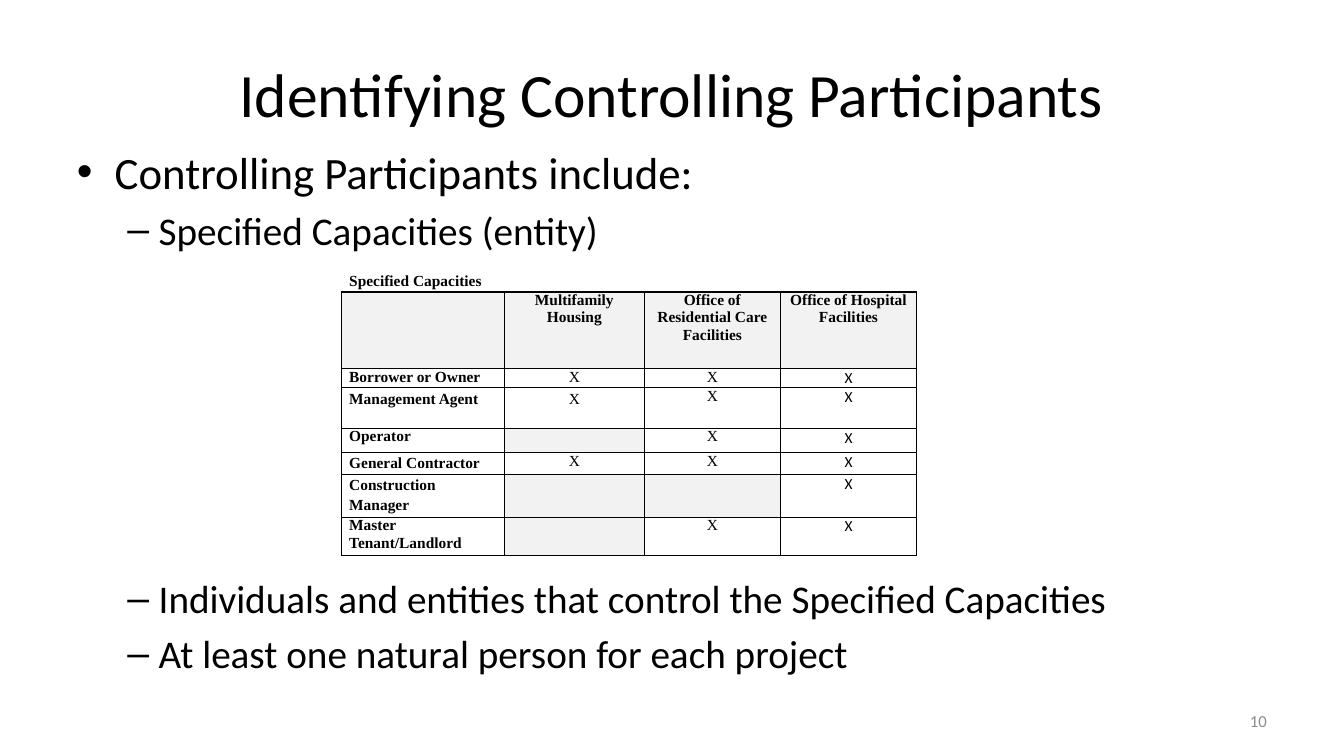
from lxml import etree
from pptx import Presentation, util as u
from pptx.dml.color import RGBColor
from pptx.enum import text as t
from pptx.oxml import ns

BLACK = RGBColor(0x00, 0x00, 0x00)
WHITE = RGBColor(0xFF, 0xFF, 0xFF)
SHADE = RGBColor(0xF2, 0xF2, 0xF2)
GREY = RGBColor(0x8C, 0x8C, 0x8C)
SANS, SERIF = "Calibri", "Times New Roman"
LEFT, CENTER, RIGHT = t.PP_ALIGN.LEFT, t.PP_ALIGN.CENTER, t.PP_ALIGN.RIGHT


def write(paragraph, words, size, font=SANS, color=BLACK, bold=False, align=LEFT,
          before=0, spacing=None, bullet=None, indent=(0, 0)):
    """Put formatted text in a paragraph; indent is (left, hanging) in cm."""
    if bullet:
        props = paragraph._p.get_or_add_pPr()
        props.set("marL", str(u.Cm(indent[0])))
        props.set("indent", str(-u.Cm(indent[1])))
        etree.SubElement(props, ns.qn("a:buFont"), typeface="Arial")
        etree.SubElement(props, ns.qn("a:buChar"), char=bullet)
    paragraph.alignment = align
    if before:
        paragraph.space_before = u.Pt(before)
    if spacing:
        paragraph.line_spacing = spacing
    if not words:
        # An empty cell keeps a small line so its row does not grow
        etree.SubElement(paragraph._p, ns.qn("a:endParaRPr"), sz=str(size * 100))
        return
    run = paragraph.add_run()
    run.text = words
    run.font.size = u.Pt(size)
    run.font.name = font
    run.font.bold = bold
    run.font.color.rgb = color


class SlideBuilder:
    def __init__(self, slide):
        self.slide = slide
        self.table_size = 11
        self.border_width = u.Pt(1)

    def text_box(self, place, paragraphs, anchor=t.MSO_ANCHOR.TOP):
        frame = self.slide.shapes.add_textbox(*map(u.Cm, place)).text_frame
        frame.word_wrap = True
        frame.vertical_anchor = anchor
        for i, (words, style) in enumerate(paragraphs):
            write(frame.add_paragraph() if i else frame.paragraphs[0], words, **style)

    def border(self, cell, visible_sides):
        props = cell._tc.get_or_add_tcPr()
        for side in "LRTB":
            line = etree.SubElement(props, ns.qn(f"a:ln{side}"), w=str(self.border_width))
            if side in visible_sides:
                fill = etree.SubElement(line, ns.qn("a:solidFill"))
                etree.SubElement(fill, ns.qn("a:srgbClr"), val=str(BLACK))
            else:
                etree.SubElement(line, ns.qn("a:noFill"))

    def cell(self, cell, words, fill, sides="LRTB", **style):
        cell.margin_left = cell.margin_right = u.Cm(0.19)
        cell.margin_top = cell.margin_bottom = 0
        self.border(cell, sides)
        cell.fill.solid()
        cell.fill.fore_color.rgb = fill
        write(cell.text_frame.paragraphs[0], words, self.table_size, **style)

    def table(self, left, top, widths, heights):
        frame = self.slide.shapes.add_table(
            len(heights), len(widths), u.Cm(left), u.Cm(top),
            u.Cm(sum(widths)), u.Cm(sum(heights)))
        table = frame.table
        table.first_row = table.horz_banding = False
        for column, width in zip(table.columns, widths):
            column.width = u.Cm(width)
        for row, height in zip(table.rows, heights):
            row.height = u.Cm(height)
        return table


def add_capacities(builder):
    caption = "Specified Capacities"
    offices = ["", "Multifamily Housing", "Office of Residential Care Facilities",
               "Office of Hospital Facilities"]
    # Capacity, marks per office, line spacing of the name and of the first mark
    capacities = [
        ("Borrower or Owner", "XXX", None, None),
        ("Management Agent", "XXX", 1.15, 1.15),
        ("Operator", "-XX", None, None),
        ("General Contractor", "XXX", 1.15, None),
        ("Construction Manager", "--X", 1.15, None),
        ("Master Tenant/Landlord", "-XX", None, None),
    ]
    table = builder.table(8.61, 6.88, [4.1, 3.53, 3.43, 3.43],
                          [0.48, 1.93, 0.48, 1.02, 0.61, 0.56, 0.56, 0.97])

    # Caption row across all columns
    for col in range(4):
        builder.cell(table.cell(0, col), "" if col else caption, WHITE, sides="B",
                     font=SERIF, bold=True)
    table.cell(0, 0).merge(table.cell(0, 3))

    # Header row
    for col, office in enumerate(offices):
        builder.cell(table.cell(1, col), office, SHADE, font=SERIF, bold=True, align=CENTER)

    # One row per capacity; a dash stands for a shaded, empty cell
    for row, (name, marks, name_spacing, mark_spacing) in enumerate(capacities, 2):
        builder.cell(table.cell(row, 0), name, WHITE, font=SERIF, bold=True,
                     spacing=name_spacing)
        for col, mark in enumerate(marks, 1):
            empty = mark == "-"
            builder.cell(table.cell(row, col), "" if empty else mark,
                         SHADE if empty else WHITE, font=SANS if col == 3 else SERIF,
                         align=CENTER, spacing=mark_spacing if col == 1 else None)


def main():
    deck = Presentation()
    deck.slide_width, deck.slide_height = u.Cm(33.87), u.Cm(19.05)
    builder = SlideBuilder(deck.slides.add_slide(deck.slide_layouts[6]))

    # Title
    builder.text_box((1.69, 0.76, 30.48, 3.18), [
        ("Identifying Controlling Participants", dict(size=44, align=CENTER)),
    ], t.MSO_ANCHOR.MIDDLE)

    # Bullets, with room for the table after the second one
    point = dict(size=32, bullet="•", indent=(0.95, 0.95))
    subpoint = dict(size=28, bullet="–", indent=(2.06, 0.79), before=5.6)
    builder.text_box((1.69, 3.51, 30.48, 13.51), [
        ("Controlling Participants include:", point),
        ("Specified Capacities (entity)", subpoint),
        ("Individuals and entities that control the Specified Capacities",
         {**subpoint, "before": 229.4}),
        ("At least one natural person for each project", subpoint),
    ])

    # Table
    add_capacities(builder)

    # Slide number
    builder.text_box((24.28, 17.65, 7.9, 1.02), [
        ("10", dict(size=12, color=GREY, align=RIGHT)),
    ], t.MSO_ANCHOR.MIDDLE)

    deck.save("out.pptx")


if __name__ == "__main__":
    main()
